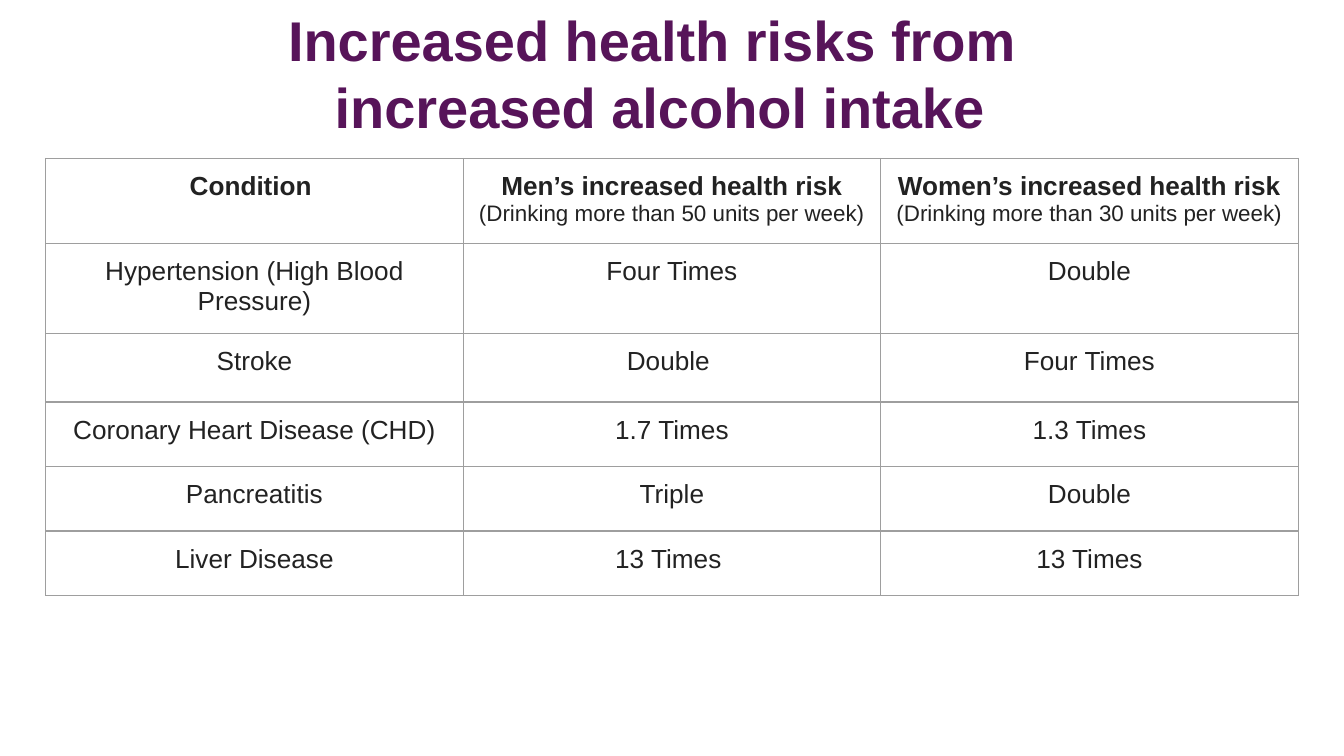
from dataclasses import dataclass

from lxml.etree import SubElement
from pptx import Presentation
from pptx.dml.color import RGBColor
from pptx.enum.text import MSO_ANCHOR, PP_ALIGN
from pptx.oxml.ns import qn
from pptx.util import Inches, Pt


@dataclass(frozen=True)
class Theme:
    font: str = "Arial"
    title_color: str = "571459"
    text_color: str = "222222"
    border_color: str = "9E9E9E"
    title_size: float = 30
    body_size: float = 14
    note_size: float = 12
    border_width: float = 0.75


THEME = Theme()
TITLE_LINES = ["Increased health risks from ", "increased alcohol intake"]
HEADERS = [
    ("Condition ",),
    ("Men’s increased health risk", "(Drinking more than 50 units per week) "),
    ("Women’s increased health risk", "(Drinking more than 30 units per week) "),
]
RISKS = [
    ("Hypertension (High Blood Pressure)", "Four Times", "Double"),
    ("Stroke", "Double ", "Four Times"),
    ("Coronary Heart Disease (CHD)", "1.7 Times", "1.3 Times"),
    ("Pancreatitis", "Triple", "Double"),
    ("Liver Disease", "13 Times ", "13 Times"),
]
CONTENT_WIDTH = Inches(9.32)
ROW_HEIGHTS = [0.48, 0.48, 0.51, 0.48, 0.48, 0.48]


def write_text(paragraph, text, size=THEME.body_size, color=THEME.text_color, bold=False):
    paragraph.alignment = PP_ALIGN.CENTER
    paragraph.line_spacing = 1.0
    run = paragraph.add_run()
    run.text = text
    run.font.name = THEME.font
    run.font.size = Pt(size)
    run.font.bold = bold
    run.font.color.rgb = RGBColor.from_string(color)


def set_margins(target, margin):
    target.margin_left = target.margin_right = margin
    target.margin_top = target.margin_bottom = margin


def add_title(slide):
    box = slide.shapes.add_textbox(Inches(0.25), Inches(0.04), CONTENT_WIDTH, Inches(1.45))
    text_frame = box.text_frame
    text_frame.word_wrap = True
    set_margins(text_frame, 0)
    first, second = text_frame.paragraphs[0], text_frame.add_paragraph()
    for paragraph, line in zip((first, second), TITLE_LINES):
        write_text(paragraph, line, size=THEME.title_size, color=THEME.title_color, bold=True)


def add_borders(cell):
    properties = cell._tc.get_or_add_tcPr()
    for position, side in enumerate(("a:lnL", "a:lnR", "a:lnT", "a:lnB")):
        line = SubElement(properties, qn(side), w=str(Pt(THEME.border_width)))
        fill = SubElement(line, qn("a:solidFill"))
        SubElement(fill, qn("a:srgbClr"), val=THEME.border_color)
        properties.insert(position, line)


def format_cell(cell):
    cell.fill.background()
    cell.vertical_anchor = MSO_ANCHOR.TOP
    set_margins(cell, Inches(0.1))
    add_borders(cell)


def add_risk_table(slide):
    frame = slide.shapes.add_table(
        len(ROW_HEIGHTS), len(HEADERS), Inches(0.34), Inches(1.18),
        CONTENT_WIDTH, Inches(sum(ROW_HEIGHTS)))
    table = frame.table
    table.horz_banding = False
    for row, height in zip(table.rows, ROW_HEIGHTS):
        row.height = Inches(height)
    for cell in table.iter_cells():
        format_cell(cell)
    for column_index, (heading, *notes) in enumerate(HEADERS):
        text_frame = table.cell(0, column_index).text_frame
        write_text(text_frame.paragraphs[0], heading, bold=True)
        for note in notes:
            write_text(text_frame.add_paragraph(), note, size=THEME.note_size)
    for row_index, risk in enumerate(RISKS, start=1):
        for column_index, text in enumerate(risk):
            write_text(table.cell(row_index, column_index).text_frame.paragraphs[0], text)


def main():
    presentation = Presentation()
    presentation.slide_width = Inches(10)
    presentation.slide_height = presentation.slide_width * 9 // 16
    slide = presentation.slides.add_slide(presentation.slide_layouts[6])
    add_title(slide)
    add_risk_table(slide)
    presentation.save("out.pptx")


if __name__ == "__main__":
    main()
